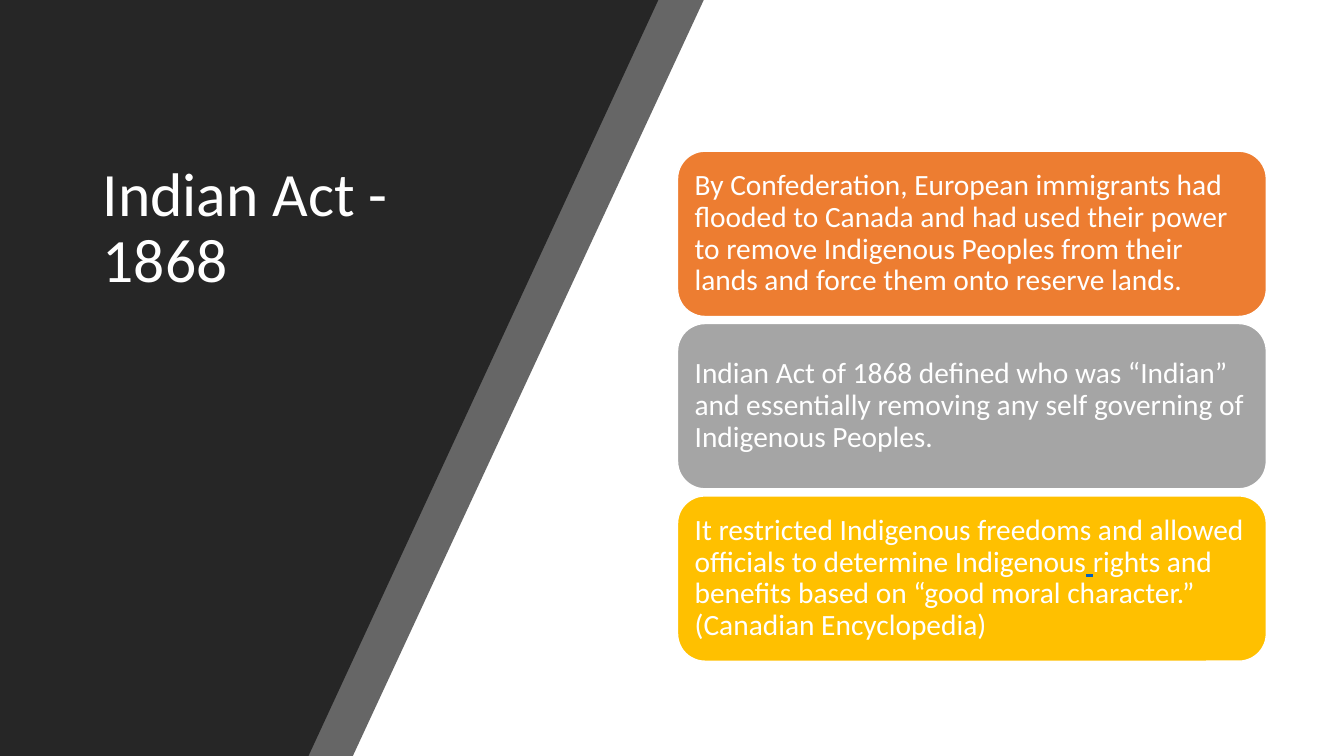
from lxml.etree import SubElement
from pptx import Presentation
from pptx.dml.color import RGBColor
from pptx.enum.shapes import MSO_SHAPE as Preset
from pptx.enum.text import MSO_ANCHOR as Anchor, PP_ALIGN as Align
from pptx.oxml.ns import qn
from pptx.util import Inches, Pt

COLORS = {
    "charcoal": "262626",
    "white": "FFFFFF",
    "orange": "ED7D31",
    "gray": "A5A5A5",
    "gold": "FFC000",
    "link": "0563C1",
}


class SlideBuilder:
    """Places styled elements by shares of the slide's width and height."""

    font = "Calibri"
    line_spacing = 0.9

    def __init__(self, deck):
        self.width, self.height = deck.slide_width, deck.slide_height
        self.slide = deck.slides.add_slide(deck.slide_layouts[6])

    def box(self, left, top, width, height):
        return (round(left * self.width), round(top * self.height),
                round(width * self.width), round(height * self.height))

    def paint(self, shape, color):
        shape.shadow.inherit = False
        shape.fill.solid()
        shape.fill.fore_color.rgb = RGBColor.from_string(COLORS[color])

    def add_text(self, shape, runs, size, inset):
        """Fill a shape with one paragraph of (text, color, underline) runs."""
        frame = shape.text_frame
        frame.word_wrap = True
        frame.vertical_anchor = Anchor.MIDDLE
        frame.margin_left = frame.margin_right = Inches(inset)
        frame.margin_top = frame.margin_bottom = Inches(0.05)
        paragraph = frame.paragraphs[0]
        paragraph.alignment = Align.LEFT
        paragraph.line_spacing = self.line_spacing
        for text, color, underline in runs:
            run = paragraph.add_run()
            run.text = text
            run.font.name = self.font
            run.font.size = Pt(size)
            run.font.underline = underline
            run.font.color.rgb = RGBColor.from_string(COLORS[color])

    def slanted_panel(self, top_edge, bottom_edge, color, opacity=100):
        """Draw a full-height panel from the left side to a slanted edge."""
        outline = self.slide.shapes.build_freeform(0, 0)
        outline.add_line_segments([
            (round(top_edge * self.width), 0),
            (round(bottom_edge * self.width), self.height),
            (0, self.height),
        ])
        panel = outline.convert_to_shape()
        self.paint(panel, color)
        panel.line.fill.background()
        if opacity < 100:
            tint = panel.element.spPr.find(qn("a:solidFill"))[0]
            SubElement(tint, qn("a:alpha")).set("val", str(opacity * 1000))

    def title(self, text, *area):
        heading = self.slide.shapes.add_textbox(*self.box(*area))
        self.add_text(heading, [(text, "white", False)], 44, 0.1)

    def card(self, runs, color, *area):
        card = self.slide.shapes.add_shape(Preset.ROUNDED_RECTANGLE, *self.box(*area))
        self.paint(card, color)
        card.line.color.rgb = RGBColor.from_string(COLORS["white"])
        card.line.width = Pt(1)
        self.add_text(card, runs, 21, 0.09)


def main():
    deck = Presentation()
    deck.slide_width, deck.slide_height = Inches(13.33), Inches(7.5)
    page = SlideBuilder(deck)

    page.slanted_panel(6.98 / 13.33, 3.5 / 13.33, "charcoal", opacity=70)
    page.slanted_panel(6.53 / 13.33, 3.06 / 13.33, "charcoal")
    page.title("Indian Act - 1868", 0.92 / 13.33, 0.48 / 7.5, 3.58 / 13.33, 0.48)

    facts = [
        ("orange", [("By Confederation, European immigrants had flooded to Canada and had "
                     "used their power to remove Indigenous Peoples from their lands and "
                     "force them onto reserve lands.", "white", False)]),
        ("gray", [("Indian Act of 1868 defined who was “Indian” and essentially removing "
                   "any self governing of Indigenous Peoples.", "white", False)]),
        ("gold", [("It restricted Indigenous freedoms and allowed officials to "
                   "determine Indigenous", "white", False),
                  (" ", "link", True),
                  ("rights and benefits based on “good moral character.” "
                   "(Canadian Encyclopedia)", "white", False)]),
    ]
    first_top, pitch = 1.5 / 7.5, 1.71 / 7.5
    for row, (color, runs) in enumerate(facts):
        page.card(runs, color, 6.72 / 13.33, first_top + row * pitch,
                  5.84 / 13.33, 1.64 / 7.5)

    deck.save("out.pptx")


if __name__ == "__main__":
    main()
